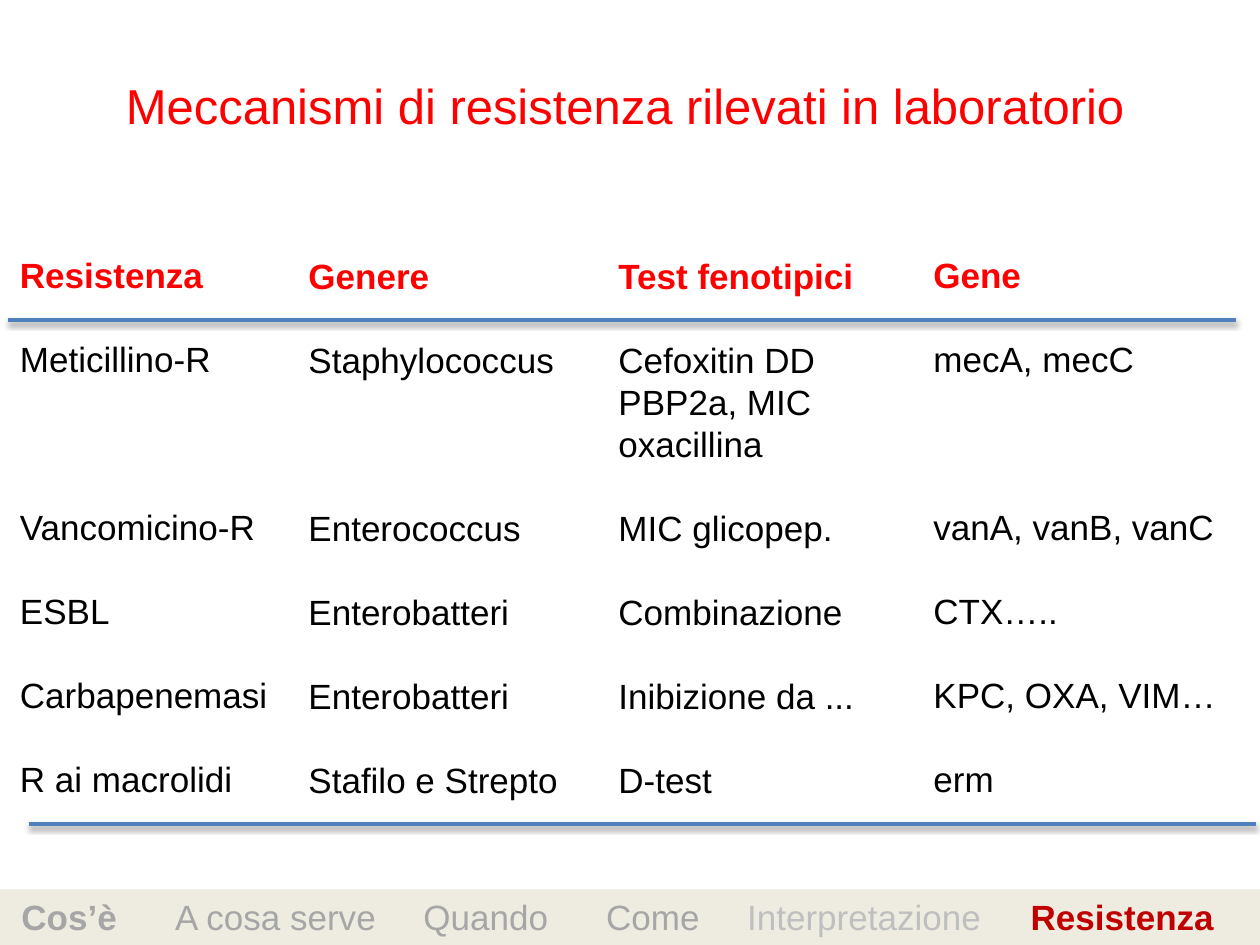
from dataclasses import dataclass

import pptx
import pptx.dml.color
import pptx.enum.shapes
import pptx.enum.text
import pptx.oxml
import pptx.oxml.ns
import pptx.util

RGBColor = pptx.dml.color.RGBColor
RED = RGBColor(0xFF, 0x00, 0x00)
DARK_RED = RGBColor(0xC0, 0x00, 0x00)
BLACK = RGBColor(0x00, 0x00, 0x00)
WHITE = RGBColor(0xFF, 0xFF, 0xFF)
BLUE = RGBColor(0x4F, 0x81, 0xBD)
BEIGE = RGBColor(0xEE, 0xEC, 0xE1)
GREY = RGBColor(0xA6, 0xA6, 0xA6)
LIGHT_GREY = RGBColor(0xBF, 0xBF, 0xBF)

FONT = "Arial"
TITLE_SIZE, TEXT_SIZE = 28, 20
LINE_FACTOR = 1.2
GRID_COLUMNS, GRID_ROWS = 100, 75
DRAWING_NS = pptx.oxml.ns.nsdecls("a")

presentation = pptx.Presentation()
presentation.slide_width = pptx.util.Inches(10)
presentation.slide_height = pptx.util.Inches(7.5)


@dataclass
class Area:
    """A box in grid columns and rows."""
    left: float
    top: float
    width: float
    height: float


@dataclass
class TextColumn:
    area: Area
    header: str
    entries: list[str]


@dataclass
class Step:
    text: str
    color: RGBColor
    bold: bool
    tab: float  # inches from the start of the text


def across(columns: float) -> int:
    return round(presentation.slide_width * columns / GRID_COLUMNS)


def down(rows: float) -> int:
    return round(presentation.slide_height * rows / GRID_ROWS)


def place(shape, area: Area, fill: RGBColor) -> None:
    shape.left, shape.top = across(area.left), down(area.top)
    shape.width, shape.height = across(area.width), down(area.height)
    shape.fill.solid()
    shape.fill.fore_color.rgb = fill
    frame = shape.text_frame
    frame.word_wrap = True
    frame.auto_size = pptx.enum.text.MSO_AUTO_SIZE.NONE
    frame.vertical_anchor = pptx.enum.text.MSO_ANCHOR.TOP


def add_text_box(slide, area: Area, fill: RGBColor):
    shape = slide.shapes.add_textbox(0, 0, 0, 0)
    place(shape, area, fill)
    return shape


def set_spacing(paragraph, size: float, blank_lines: int = 0) -> None:
    line_height = size * LINE_FACTOR
    paragraph.line_spacing = pptx.util.Pt(line_height)
    paragraph.space_before = pptx.util.Pt(line_height * blank_lines)


def add_run(paragraph, text: str, size: float, color: RGBColor, bold: bool = False) -> None:
    run = paragraph.add_run()
    run.text = text
    run.font.name = FONT
    run.font.size = pptx.util.Pt(size)
    run.font.bold = bold
    run.font.color.rgb = color


def add_text_column(slide, column: TextColumn) -> None:
    frame = add_text_box(slide, column.area, WHITE).text_frame
    paragraph = frame.paragraphs[0]
    set_spacing(paragraph, TEXT_SIZE)
    add_run(paragraph, column.header, TEXT_SIZE, RED, bold=True)
    for index, entry in enumerate(column.entries):
        # The first entry takes three lines, whether filled or blank
        lines = entry.split("\n")
        blank_lines = 3 if index == 1 and "\n" not in column.entries[0] else 1
        for line_index, line in enumerate(lines):
            paragraph = frame.add_paragraph()
            set_spacing(paragraph, TEXT_SIZE, 0 if line_index else blank_lines)
            add_run(paragraph, line, TEXT_SIZE, BLACK)


def add_rule(slide, left: float, right: float, row: float) -> None:
    connector = slide.shapes.add_connector(
        pptx.enum.shapes.MSO_CONNECTOR.STRAIGHT,
        across(left), down(row), across(right), down(row))
    connector.line.color.rgb = BLUE
    connector.line.width = pptx.util.Pt(2)
    properties = connector.element.find(pptx.oxml.ns.qn("p:spPr"))
    properties.append(pptx.oxml.parse_xml(
        f'<a:effectLst {DRAWING_NS}><a:outerShdw blurRad="40000" dist="20000" '
        'dir="5400000" rotWithShape="0"><a:srgbClr val="000000">'
        '<a:alpha val="38000"/></a:srgbClr></a:outerShdw></a:effectLst>'))


def add_step_bar(slide, area: Area, steps: list[Step]) -> None:
    frame = add_text_box(slide, area, BEIGE).text_frame
    frame.margin_left = pptx.util.Inches(0.18)
    frame.margin_right = 0
    paragraph = frame.paragraphs[0]
    set_spacing(paragraph, TEXT_SIZE)
    stops = "".join(f'<a:tab pos="{pptx.util.Inches(step.tab)}" algn="l"/>'
                    for step in steps[1:])
    paragraph._p.get_or_add_pPr().append(
        pptx.oxml.parse_xml(f"<a:tabLst {DRAWING_NS}>{stops}</a:tabLst>"))
    for index, step in enumerate(steps):
        text = f"\t{step.text}" if index else step.text
        add_run(paragraph, text, TEXT_SIZE, step.color, step.bold)


COLUMNS = [
    TextColumn(Area(0.6, 19.6, 21.8, 44.8), "Resistenza",
               ["Meticillino-R", "Vancomicino-R", "ESBL", "Carbapenemasi",
                "R ai macrolidi"]),
    TextColumn(Area(23.5, 19.7, 22, 44.8), "Genere",
               ["Staphylococcus", "Enterococcus", "Enterobatteri", "Enterobatteri",
                "Stafilo e Strepto"]),
    TextColumn(Area(48.1, 19.7, 23.1, 44.8), "Test fenotipici",
               ["Cefoxitin DD\nPBP2a, MIC oxacillina", "MIC glicopep.",
                "Combinazione", "Inibizione da ...", "D-test"]),
    TextColumn(Area(73.1, 19.6, 24.6, 44.8), "Gene",
               ["mecA, mecC", "vanA, vanB, vanC", "CTX…..", "KPC, OXA, VIM…", "erm"]),
]
STEPS = [
    Step("Cos’è", GREY, True, 0),
    Step("A cosa serve", GREY, False, 1.22),
    Step("Quando", GREY, False, 3.19),
    Step("Come", GREY, False, 4.64),
    Step("Interpretazione", LIGHT_GREY, False, 5.76),
    Step("Resistenza", DARK_RED, True, 8.01),
]


def main() -> None:
    slide = presentation.slides.add_slide(presentation.slide_layouts[5])

    # Title
    title = slide.shapes.title
    place(title, Area(2.3, 5.5, 94.6, 5.7), WHITE)
    paragraph = title.text_frame.paragraphs[0]
    paragraph.alignment = pptx.enum.text.PP_ALIGN.CENTER
    set_spacing(paragraph, TITLE_SIZE)
    add_run(paragraph, "Meccanismi di resistenza rilevati in laboratorio",
            TITLE_SIZE, RED)

    # Resistance mechanisms, one text box per column
    for column in COLUMNS:
        add_text_column(slide, column)

    # Rules under the headers and under the last row
    add_rule(slide, 0.6, 98.1, 25.4)
    add_rule(slide, 2.3, 99.7, 65.4)

    # Progress bar with the current step highlighted
    add_step_bar(slide, Area(-0.1, 70.6, 100.1, 4.4), STEPS)

    presentation.save("out.pptx")


if __name__ == "__main__":
    main()
